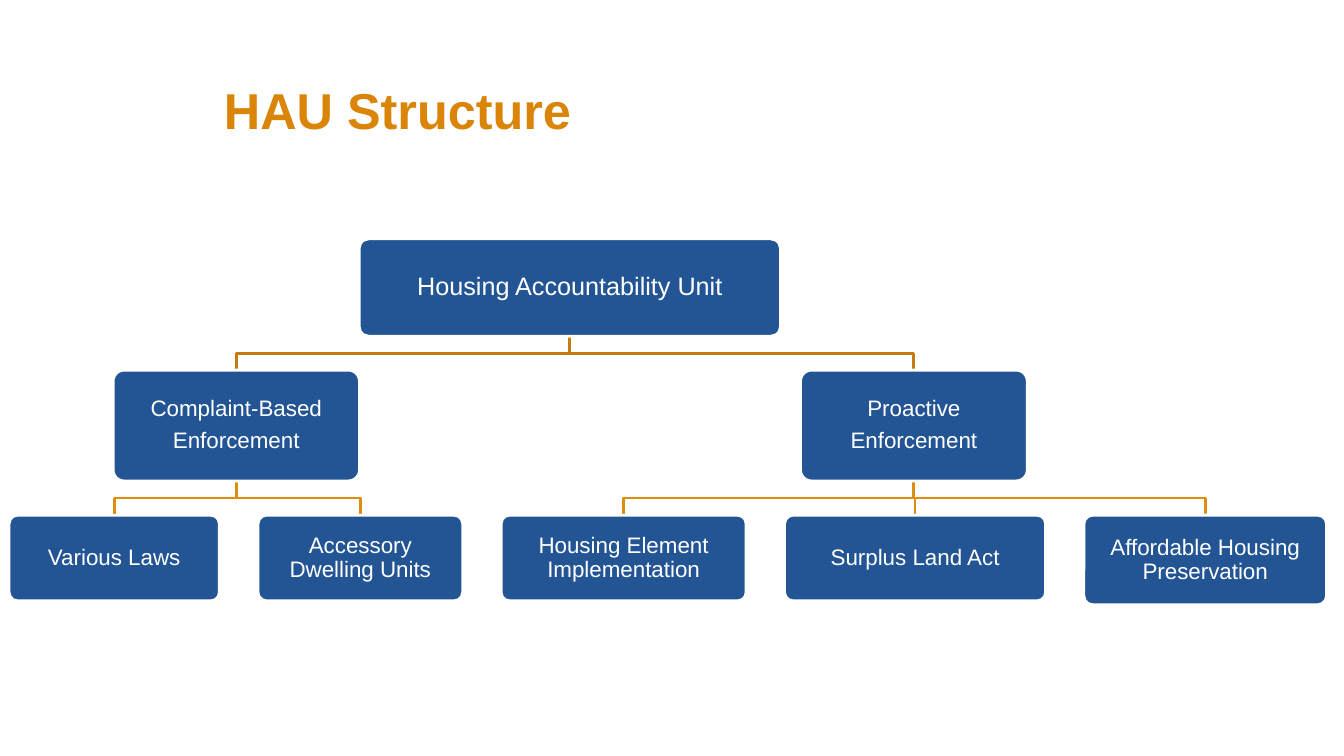
from dataclasses import dataclass

from pptx import Presentation
from pptx.dml.color import RGBColor
from pptx.enum.shapes import MSO_SHAPE
from pptx.enum.text import MSO_ANCHOR, PP_ALIGN
from pptx.slide import Slide
from pptx.text.text import TextFrame
from pptx.util import Pt

ROUNDED = MSO_SHAPE.ROUNDED_RECTANGLE
MIDDLE = MSO_ANCHOR.MIDDLE
CENTER = PP_ALIGN.CENTER

WHITE = RGBColor(0xFF, 0xFF, 0xFF)
BLUE = RGBColor(0x23, 0x55, 0x95)
ORANGE = RGBColor(0xDA, 0x85, 0x08)
DARK_AMBER = RGBColor(0xC5, 0x7C, 0x0E)
AMBER = RGBColor(0xDF, 0x8D, 0x0F)

SIDES = ("left", "top", "right", "bottom")
UNIT_TOP, BRANCH_TOP, LEAF_TOP = 170.6, 264.4, 368
BRANCH_HEIGHT, LEAF_HEIGHT = 79.2, 61.2


@dataclass(frozen=True)
class Box:
    lines: tuple[str, ...]
    left: float
    top: float
    width: float
    height: float
    size: float = 16
    inset: float = 5
    link_color: RGBColor = AMBER
    children: tuple["Box", ...] = ()

    @property
    def center(self) -> float:
        return self.left + self.width / 2

    @property
    def bottom(self) -> float:
        return self.top + self.height


def leaf(text: str, left: float, width: float, height: float = LEAF_HEIGHT,
         inset: float = 3.6) -> Box:
    return Box((text,), left, LEAF_TOP, width, height, inset=inset)


COMPLAINT = Box(
    ("Complaint-Based", "Enforcement"), 80.8, BRANCH_TOP, 176, BRANCH_HEIGHT,
    children=(
        leaf("Various Laws", 6.5, 150.2),
        leaf("Accessory Dwelling Units", 184.3, 146.2),
    ),
)
PROACTIVE = Box(
    ("Proactive", "Enforcement"), 571.8, BRANCH_TOP, 162, BRANCH_HEIGHT,
    children=(
        leaf("Housing Element Implementation", 358, 175),
        leaf("Surplus Land Act", 560.4, 186.5),
        leaf("Affordable Housing Preservation", 774.2, 173.4, 64, 5),
    ),
)
UNIT = Box(
    ("Housing Accountability Unit",), 256.5, UNIT_TOP, 301, 69.6, 18,
    link_color=DARK_AMBER, children=(COMPLAINT, PROACTIVE),
)


def write(tf: TextFrame, lines: tuple[str, ...], inset: float,
          font: dict, paragraph: dict) -> None:
    tf.word_wrap = True
    tf.vertical_anchor = MIDDLE
    for side in SIDES:
        setattr(tf, f"margin_{side}", Pt(inset))
    for i, line in enumerate(lines):
        p = tf.add_paragraph() if i else tf.paragraphs[0]
        for name, value in paragraph.items():
            setattr(p, name, value)
        r = p.add_run()
        r.text = line
        r.font.color.rgb = font["color"]
        for name in ("name", "size", "bold"):
            setattr(r.font, name, font[name])


def add_title(s: Slide) -> None:
    sp = s.shapes.add_textbox(Pt(160), Pt(36), Pt(712), Pt(84))
    font = {"name": "Arial", "size": Pt(36), "bold": True, "color": ORANGE}
    write(sp.text_frame, ("HAU Structure",), 0, font, {})


def add_link(s: Slide, parent: Box, child: Box) -> None:
    middle = (parent.bottom + child.top) / 2
    builder = s.shapes.build_freeform(Pt(parent.center), Pt(parent.bottom))
    corners = ((parent.center, middle), (child.center, middle),
               (child.center, child.top))
    builder.add_line_segments([(Pt(x), Pt(y)) for x, y in corners], close=False)
    sp = builder.convert_to_shape()
    sp.shadow.inherit = False
    sp.fill.background()
    sp.line.color.rgb = parent.link_color
    sp.line.width = Pt(2)


def add_box(s: Slide, box: Box) -> None:
    sp = s.shapes.add_shape(ROUNDED, Pt(box.left), Pt(box.top),
                            Pt(box.width), Pt(box.height))
    sp.adjustments[0] = 0.1
    sp.shadow.inherit = False
    sp.fill.solid()
    sp.fill.fore_color.rgb = BLUE
    sp.line.color.rgb = WHITE
    sp.line.width = Pt(2)
    font = {"name": "Arial", "size": Pt(box.size), "bold": False, "color": WHITE}
    paragraph = {"alignment": CENTER, "line_spacing": 0.9,
                 "space_after": Pt(0.35 * box.size)}
    write(sp.text_frame, box.lines, box.inset, font, paragraph)


def add_tree(s: Slide, box: Box) -> None:
    for child in box.children:
        add_link(s, box, child)
        add_tree(s, child)
    add_box(s, box)


def main() -> None:
    prs = Presentation()
    prs.slide_width, prs.slide_height = Pt(960), Pt(540)
    s = prs.slides.add_slide(prs.slide_layouts[6])
    add_title(s)
    add_tree(s, UNIT)
    prs.save("out.pptx")


if __name__ == "__main__":
    main()
